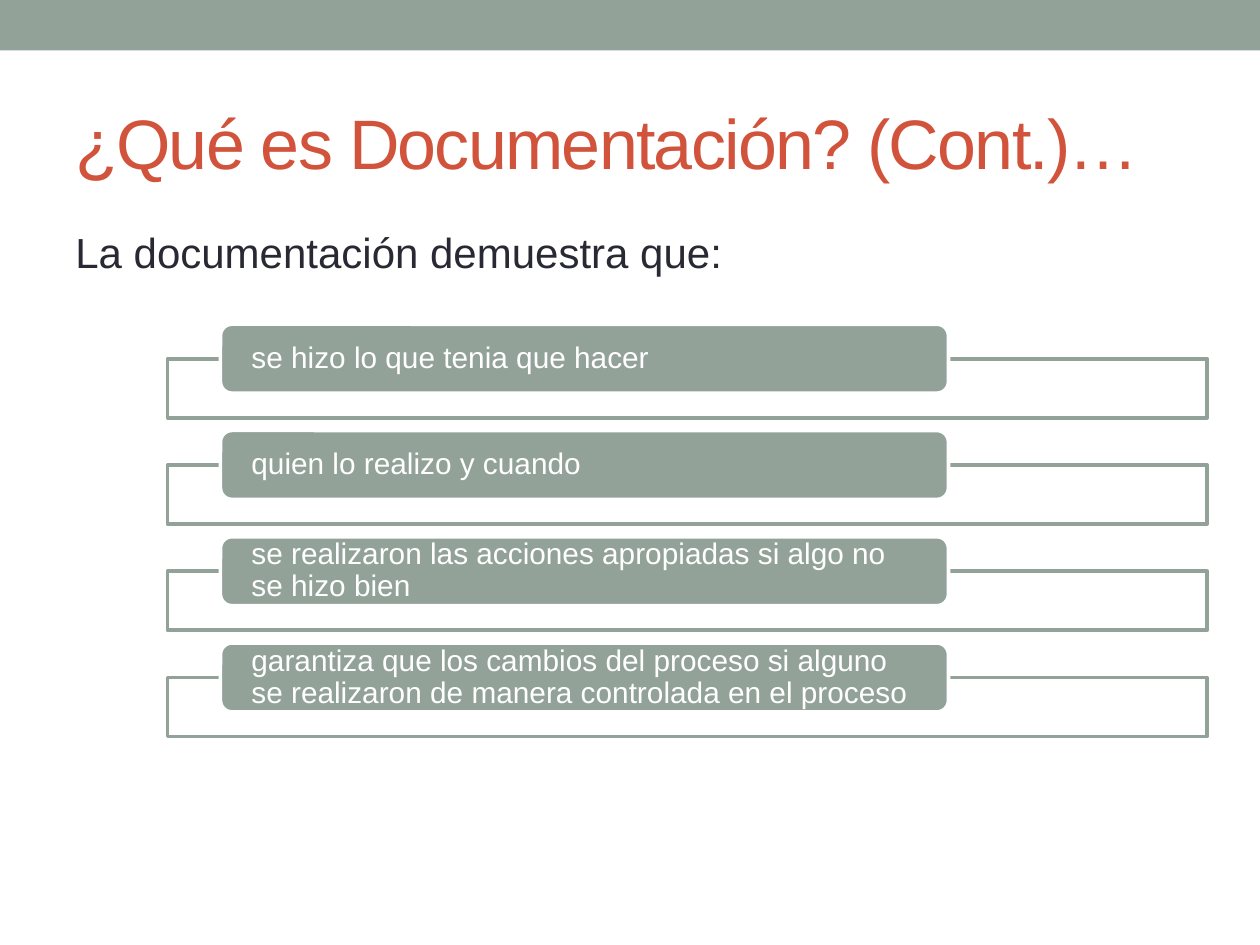
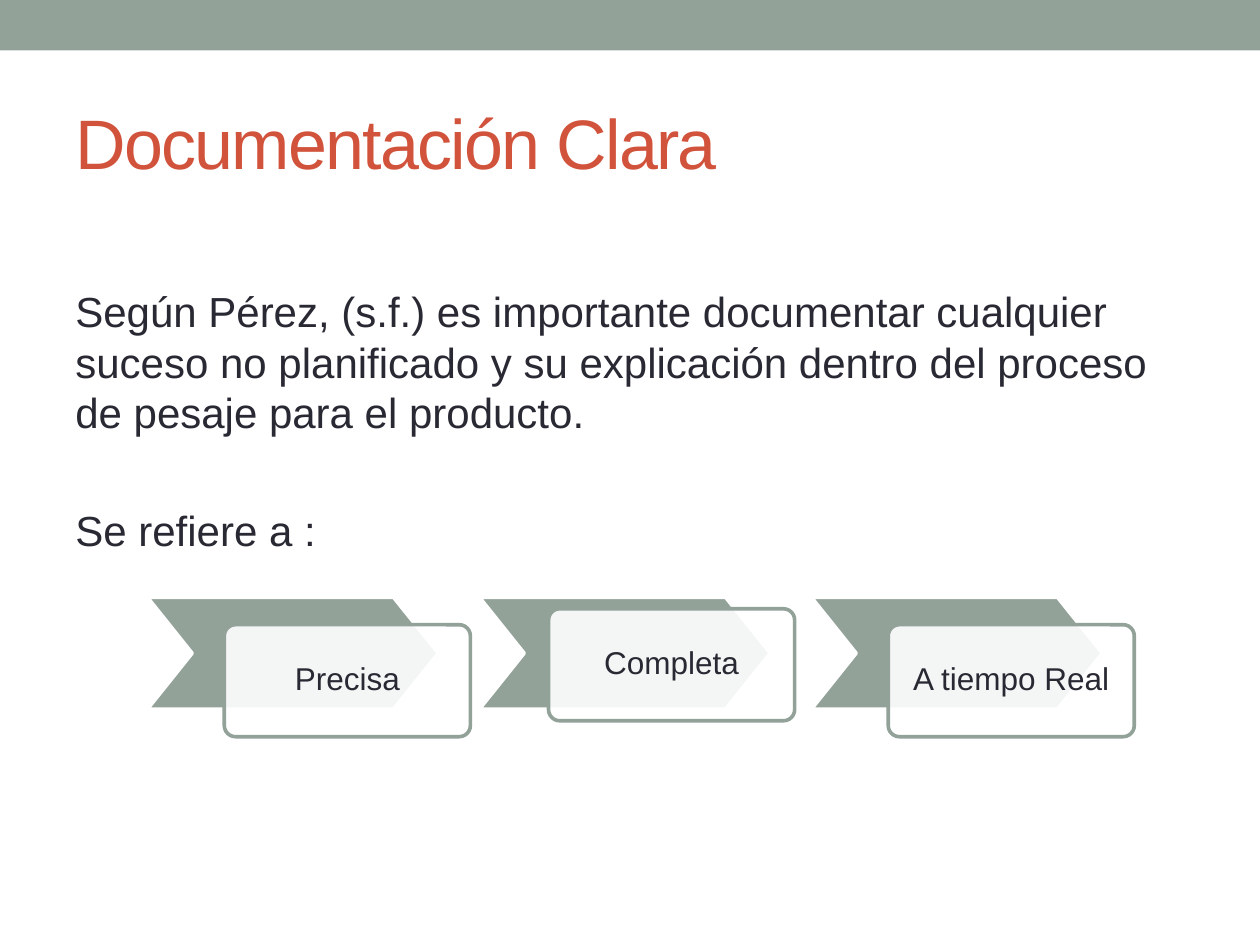
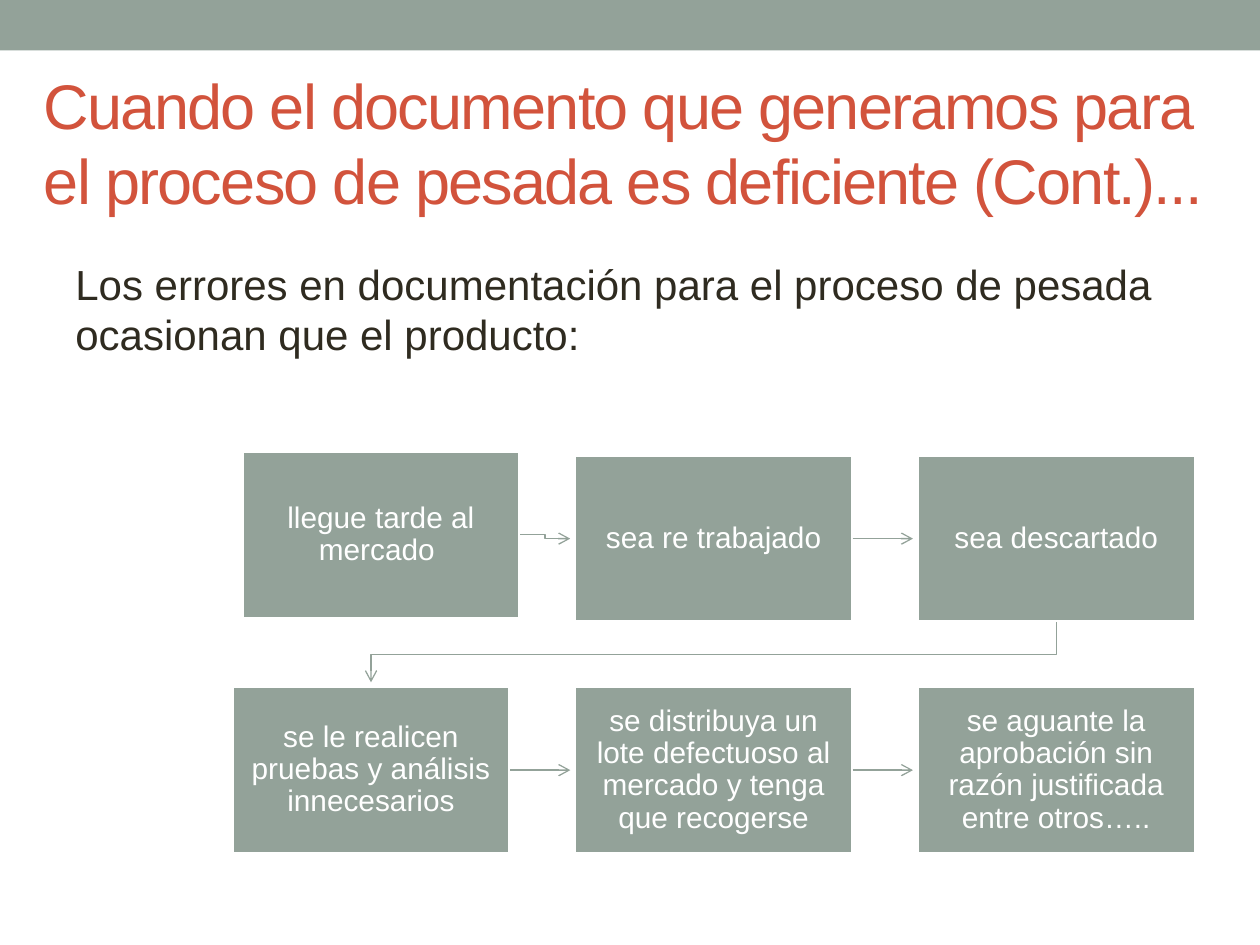
from dataclasses import dataclass

import lxml.etree
import pptx
import pptx.dml.color
import pptx.enum.shapes
import pptx.enum.text
import pptx.oxml.ns
import pptx.util

Pt = pptx.util.Pt
RGB = pptx.dml.color.RGBColor.from_string
qn = pptx.oxml.ns.qn
KIND = pptx.enum.shapes.MSO_SHAPE
ALIGN = pptx.enum.text.PP_ALIGN
ANCHOR = pptx.enum.text.MSO_ANCHOR


@dataclass(frozen=True)
class Theme:
    font: str = "Arial"
    sage: str = "93A299"
    rust: str = "D2533C"
    ink: str = "292934"
    umber: str = "2F2B20"
    white: str = "FFFFFF"
    title: int = 40
    long_title: int = 36
    body: int = 24
    card: int = 18
    tile: int = 17
    edge: float = 2.08
    thin: float = 0.75


theme = Theme()


def draw(page, kind, box, fill, edge=None, alpha=None):
    """Add a preset shape; box is left, top, width, height in points."""
    shape = page.shapes.add_shape(kind, *map(Pt, box))
    shape.shadow.inherit = False
    shape.fill.solid()
    shape.fill.fore_color.rgb = RGB(fill)
    if alpha:
        color = shape._element.spPr.find(qn("a:solidFill"))[0]
        lxml.etree.SubElement(color, qn("a:alpha"), val=str(alpha * 1000))
    if edge:
        shape.line.color.rgb = RGB(edge)
        shape.line.width = Pt(theme.edge)
    else:
        shape.line.fill.background()
    return shape


def write(shape, *lines, size, color, align=ALIGN.LEFT, anchor=ANCHOR.MIDDLE,
          pad=(7.2, 3.6, 7.2, 3.6), lead=None, gap=0, first=0, track=0):
    """Fill a shape with paragraphs; pad is left, top, right, bottom."""
    frame = shape.text_frame
    frame.word_wrap = True
    frame.auto_size = pptx.enum.text.MSO_AUTO_SIZE.NONE
    frame.vertical_anchor = anchor
    (frame.margin_left, frame.margin_top,
     frame.margin_right, frame.margin_bottom) = map(Pt, pad)
    for i, line in enumerate(lines):
        para = frame.add_paragraph() if i else frame.paragraphs[0]
        para.alignment = align
        para.space_before = Pt(gap if i else first)
        if lead:
            para.line_spacing = lead
        run = para.add_run()
        run.text = line
        run.font.name = theme.font
        run.font.size = Pt(size)
        run.font.color.rgb = RGB(color)
        if track:
            run._r.get_or_add_rPr().set("spc", str(track * 100))


deck = pptx.Presentation()
deck.slide_width, deck.slide_height = Pt(720), Pt(540)

# Band, title and body text of every slide
heads = [
    dict(title="¿Qué es Documentación? (Cont.)…", size=theme.title,
         left=36, width=648, top=126, inset=3.6, color=theme.ink,
         body=["La documentación demuestra que:"]),
    dict(title="Documentación Clara", size=theme.title,
         left=36, width=648, top=126, inset=37.3, color=theme.ink,
         body=["Según Pérez, (s.f.) es importante documentar cualquier suceso "
               "no planificado y su explicación dentro del proceso de pesaje "
               "para el producto.", "Se refiere a :"]),
    dict(title="Cuando el documento que generamos para el proceso de pesada "
               "es deficiente (Cont.)...", size=theme.long_title,
         left=18, width=702, top=144, inset=3.6, color=theme.umber,
         body=["Los errores en documentación para el proceso de pesada "
               "ocasionan que el producto:"]),
]
pages = []
for head in heads:
    page = deck.slides.add_slide(deck.slide_layouts[6])
    pages.append(page)
    draw(page, KIND.RECTANGLE, (0, 0, 720, 28.8), theme.sage)
    title = page.shapes.add_textbox(
        *map(Pt, (head["left"], 42, head["width"], 78)))
    write(title, head["title"], size=head["size"], color=theme.rust, track=-1)
    body = page.shapes.add_textbox(
        *map(Pt, (36, head["top"], 648, 510 - head["top"])))
    write(body, *head["body"], size=theme.body, color=head["color"],
          anchor=ANCHOR.TOP, pad=(7.2, head["inset"], 7.2, 3.6),
          first=4.8, gap=38.4)
proof, clear, flaws = pages

# Slide 1: pills, each on the top edge of its frame
claims = [
    "se hizo lo que tenia que hacer",
    "quien lo realizo y cuando",
    "se realizaron las acciones apropiadas si algo no se hizo bien",
    "garantiza que los cambios del proceso si alguno se realizaron de manera "
    "controlada en el proceso",
]
pill_h = 39.4
for i, claim in enumerate(claims):
    top = 205 + 60.72 * i
    draw(proof, KIND.RECTANGLE, (95.8, top, 594, 33.8),
         theme.white, theme.sage, alpha=90)
    pill = draw(proof, KIND.ROUNDED_RECTANGLE,
                (126, top - pill_h / 2, 416, pill_h), theme.sage, theme.white)
    write(pill, claim, size=theme.tile, color=theme.white,
          pad=(15.8, 0, 15.8, 0), lead=0.9)

# Slide 2: chevrons, each with a card over its lower right part
traits = [("Precisa", 44, 15.7), ("Completa", 39.6, 6.6),
          ("A tiempo Real", 44, 15.7)]
for i, (trait, right, down) in enumerate(traits):
    left, top = 84.2 + 189.7 * i, 341.3
    sign = draw(clear, KIND.CHEVRON, (left, top, 166.3, 64),
                theme.sage, theme.white)
    sign.adjustments[0] = 0.4
    card = draw(clear, KIND.ROUNDED_RECTANGLE,
                (left + right, top + down, 140.6, 64),
                theme.white, theme.sage, alpha=90)
    card.adjustments[0] = 0.1
    write(card, trait, size=theme.card, color=theme.ink, align=ALIGN.CENTER,
          pad=(10, 10, 10, 10), lead=0.9)

# Slide 3: two rows of three tiles, the first one a little out of line
harms = [
    "llegue tarde al mercado ",
    "sea re trabajado",
    "sea descartado",
    "se le realicen pruebas y análisis innecesarios",
    "se distribuya un lote defectuoso al mercado y tenga que recogerse",
    "se aguante la aprobación sin razón justificada entre otros…..",
]
tiles = []
for i, harm in enumerate(harms):
    row, col = divmod(i, 3)
    left, top = 132.5 + 195.8 * col, 260 + 132.3 * row
    if i == 0:
        left, top = left + 5.7, top - 2.2
    tile = draw(flaws, KIND.RECTANGLE, (left, top, 159, 95.6),
                theme.sage, theme.white)
    write(tile, harm, size=theme.tile, color=theme.white, align=ALIGN.CENTER,
          pad=(9.4, 9.4, 9.4, 9.4), lead=0.9)
    tiles.append(tile)

gap = Pt(2.4)
links = []
for start, end in [(1, 2), (3, 4), (4, 5)]:
    source, goal = tiles[start], tiles[end]
    y = goal.top + goal.height // 2
    link = flaws.shapes.add_connector(
        pptx.enum.shapes.MSO_CONNECTOR.STRAIGHT,
        source.left + source.width, y, goal.left - gap, y)
    link.begin_connect(source, 3)
    links.append(link)

one, two, three, four = tiles[:4]
x1, y1 = one.left + one.width, one.top + one.height // 2
x2, y2 = two.left - gap, two.top + two.height // 2
x3, y3 = three.left + three.width // 2, three.top + three.height
x4, y4 = four.left + four.width // 2, four.top - gap
mid_x, mid_y = (x1 + x2) // 2, (y3 + four.top) // 2
for start, *bends in [
    [(x1, y1), (mid_x, y1), (mid_x, y2), (x2, y2)],
    [(x3, y3), (x3, mid_y), (x4, mid_y), (x4, y4)],
]:
    route = flaws.shapes.build_freeform(*start)
    route.add_line_segments(bends, close=False)
    link = route.convert_to_shape()
    link.fill.background()
    links.append(link)

for link in links:
    link.line.color.rgb = RGB(theme.sage)
    link.line.width = Pt(theme.thin)
    props = link._element.spPr
    lxml.etree.SubElement(props.find(qn("a:ln")), qn("a:tailEnd"), type="arrow")
    lxml.etree.SubElement(props, qn("a:effectLst"))

deck.save("out.pptx")
